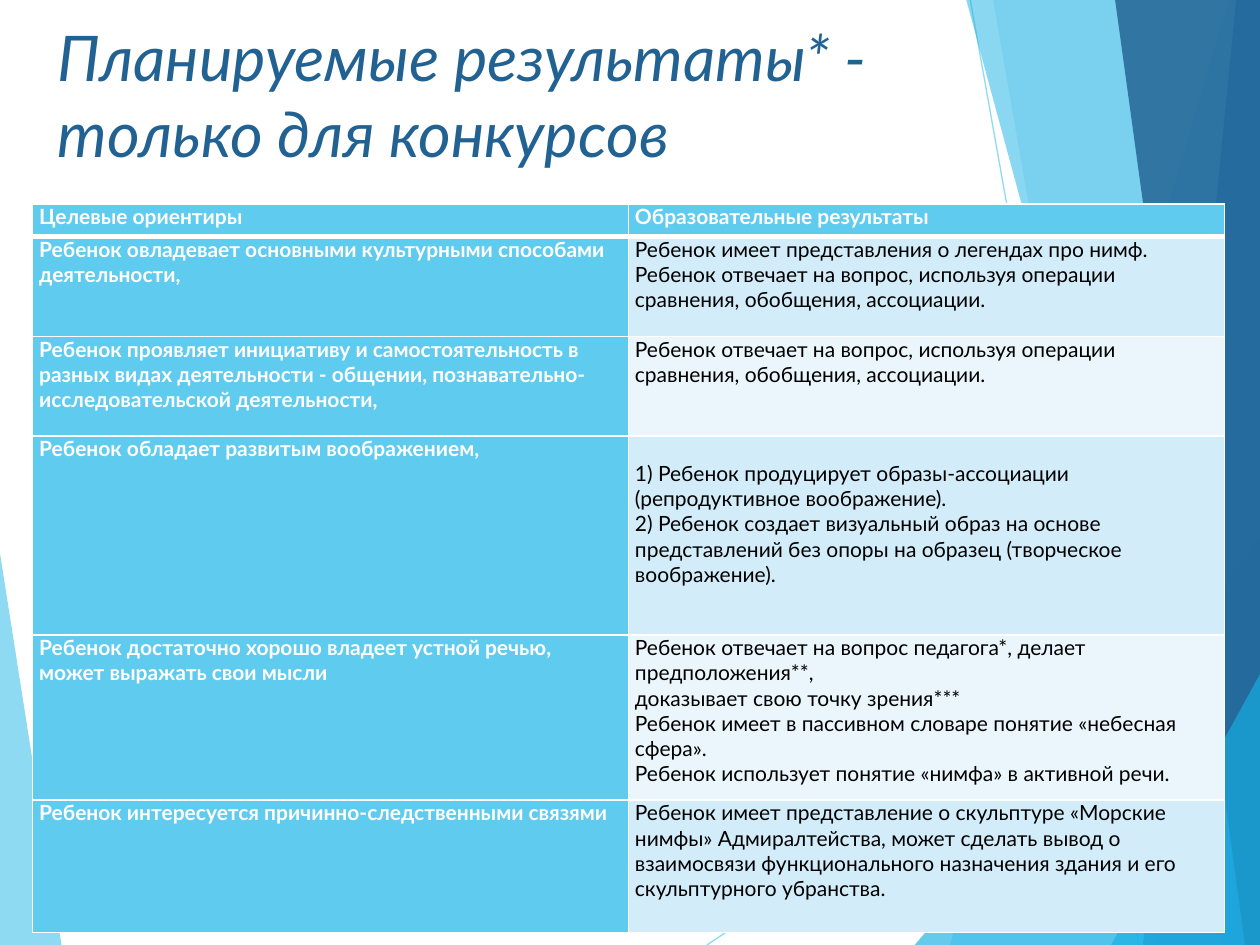
import copy

import lxml.etree
import pptx
import pptx.dml.color
import pptx.enum.text
import pptx.oxml
import pptx.oxml.ns
import pptx.util
from pptx.util import Cm, Pt

WIDTH, HEIGHT = 25.4, 19.05
SKY, NAVY, AZURE = "5FCBEF", "226292", "17B0E4"
qn = pptx.oxml.ns.qn


def rgb(color):
    return pptx.dml.color.RGBColor.from_string(color)


def write(tf, text, size=12, color="000000", bold=False, italic=False):
    """Fill a text frame: a newline starts a paragraph, a vertical tab breaks a line."""
    tf.text = text
    for p in tf.paragraphs:
        p.alignment = pptx.enum.text.PP_ALIGN.LEFT
        for r in p.runs:
            r.font.name, r.font.size = "Lato", Pt(size)
            r.font.bold, r.font.italic = bold, italic
            r.font.color.rgb = rgb(color)
        for br in p._p.findall(qn("a:br")):
            br.insert(0, copy.deepcopy(p.runs[0]._r.rPr))


prs = pptx.Presentation()
prs.slide_width, prs.slide_height = Cm(WIDTH), Cm(HEIGHT)
s = prs.slides.add_slide(prs.slide_layouts[5])

# Each facet runs from a slanted side to a slide edge:
# top x, top y, bottom x, edge x, colour, opacity in percent
facets = [
    (0, 11.15, 1.24, 0, SKY, 70),
    (24.77, 0, 19.15, WIDTH, SKY, 36),
    (20.02, 0, 23.34, WIDTH, SKY, 20),
    (WIDTH, 10.9, 18.44, WIDTH, AZURE, 66),
    (19.48, 0, 24.64, WIDTH, AZURE, 50),
    (24.92, 0, 23.04, WIDTH, "2E83C3", 70),
    (22.48, 0, 25.1, WIDTH, NAVY, 82),
    (WIDTH, 13.59, 22.4, WIDTH, AZURE, 66),
]
rays = [(14.25, HEIGHT, WIDTH, 11.61), (19.56, 0, 22.96, HEIGHT)]

translucent = []
for x1, y1, x2, y2 in rays:
    ray = s.shapes.add_connector(1, Cm(x1), Cm(y1), Cm(x2), Cm(y2))
    ray.line.color.rgb = rgb(SKY)
    ray.line.width = Pt(0.75)
    lxml.etree.SubElement(ray._element.spPr, qn("a:effectLst"))
    translucent.append((ray, 70))

for top_x, top_y, bottom_x, edge, color, opacity in facets:
    outline = s.shapes.build_freeform(Cm(top_x), Cm(top_y))
    corners = [(bottom_x, HEIGHT), (edge, HEIGHT), (edge, top_y)]
    outline.add_line_segments([(Cm(x), Cm(y)) for x, y in corners])
    facet = outline.convert_to_shape()
    facet.shadow.inherit = False
    facet.fill.solid()
    facet.fill.fore_color.rgb = rgb(color)
    facet.line.fill.background()
    translucent.append((facet, opacity))

for sp, opacity in translucent:
    clr = next(sp._element.spPr.iter(qn("a:srgbClr")))
    lxml.etree.SubElement(clr, qn("a:alpha")).set("val", str(opacity * 1000))

title = s.shapes.title
s.shapes._spTree.append(title._element)  # in front of the facets
title.left, title.top, title.width, title.height = Cm(0.91), Cm(0.25), Cm(23.47), Cm(3.66)
tf = title.text_frame
tf.auto_size = pptx.enum.text.MSO_AUTO_SIZE.NONE
tf.vertical_anchor = pptx.enum.text.MSO_ANCHOR.TOP
write(tf, "Планируемые результаты* - \vтолько для конкурсов", size=36, color=NAVY, italic=True)

# Row height in cm, target, result
rows = [
    (0.66, "Целевые ориентиры", "Образовательные результаты"),
    (2.01, "Ребенок овладевает основными культурными способами деятельности,",
     "Ребенок имеет представления о легендах про нимф.\n"
     "Ребенок отвечает на вопрос, используя операции сравнения, обобщения, ассоциации."),
    (2.01, "Ребенок проявляет инициативу и самостоятельность в разных видах деятельности - "
     "общении, познавательно-исследовательской деятельности,",
     "Ребенок отвечает на вопрос, используя операции сравнения, обобщения, ассоциации."),
    (4.01, "Ребенок обладает развитым воображением,",
     "1) Ребенок продуцирует образы-ассоциации (репродуктивное воображение).\n"
     "2) Ребенок создает визуальный образ на основе представлений без опоры на образец "
     "(творческое воображение)."),
    (3.33, "Ребенок достаточно хорошо владеет устной речью, может выражать свои мысли",
     "Ребенок отвечает на вопрос педагога*, делает предположения**,\n"
     "доказывает свою точку зрения***\n"
     "Ребенок имеет в пассивном словаре понятие «небесная сфера».\n"
     "Ребенок использует понятие «нимфа» в активной речи."),
    (2.67, "Ребенок интересуется причинно-следственными связями",
     "Ребенок имеет представление о скульптуре «Морские нимфы» Адмиралтейства, может "
     "сделать вывод о взаимосвязи функционального назначения здания и его скульптурного "
     "убранства."),
]
IMAGINATION_ROW = 3
table = s.shapes.add_table(len(rows), 2, Cm(0.66), Cm(4.11), Cm(24.02), Cm(14.69)).table

for i, (height, *texts) in enumerate(rows):
    table.rows[i].height = Cm(height)
    for j, text in enumerate(texts):
        cell = table.cell(i, j)
        strong = i == 0 or j == 0
        cell.margin_left = cell.margin_right = Cm(0.13)
        cell.margin_top = cell.margin_bottom = 0
        if i == IMAGINATION_ROW and j == 1:
            cell.margin_top = Cm(0.5)
        write(cell.text_frame, text, color="FFFFFF" if strong else "000000", bold=strong)
        tcPr = cell._tc.get_or_add_tcPr()
        for side in "LRTB":
            thick = (i, side) in [(0, "B"), (1, "T")]
            ln = lxml.etree.SubElement(tcPr, qn(f"a:ln{side}"), w=str(Pt(3 if thick else 1)))
            fill = lxml.etree.SubElement(ln, qn("a:solidFill"))
            lxml.etree.SubElement(fill, qn("a:srgbClr"), val="FFFFFF")
        cell.fill.solid()
        cell.fill.fore_color.rgb = rgb(SKY if strong else "D2ECF9" if i % 2 else "EAF6FC")

prs.save("out.pptx")
